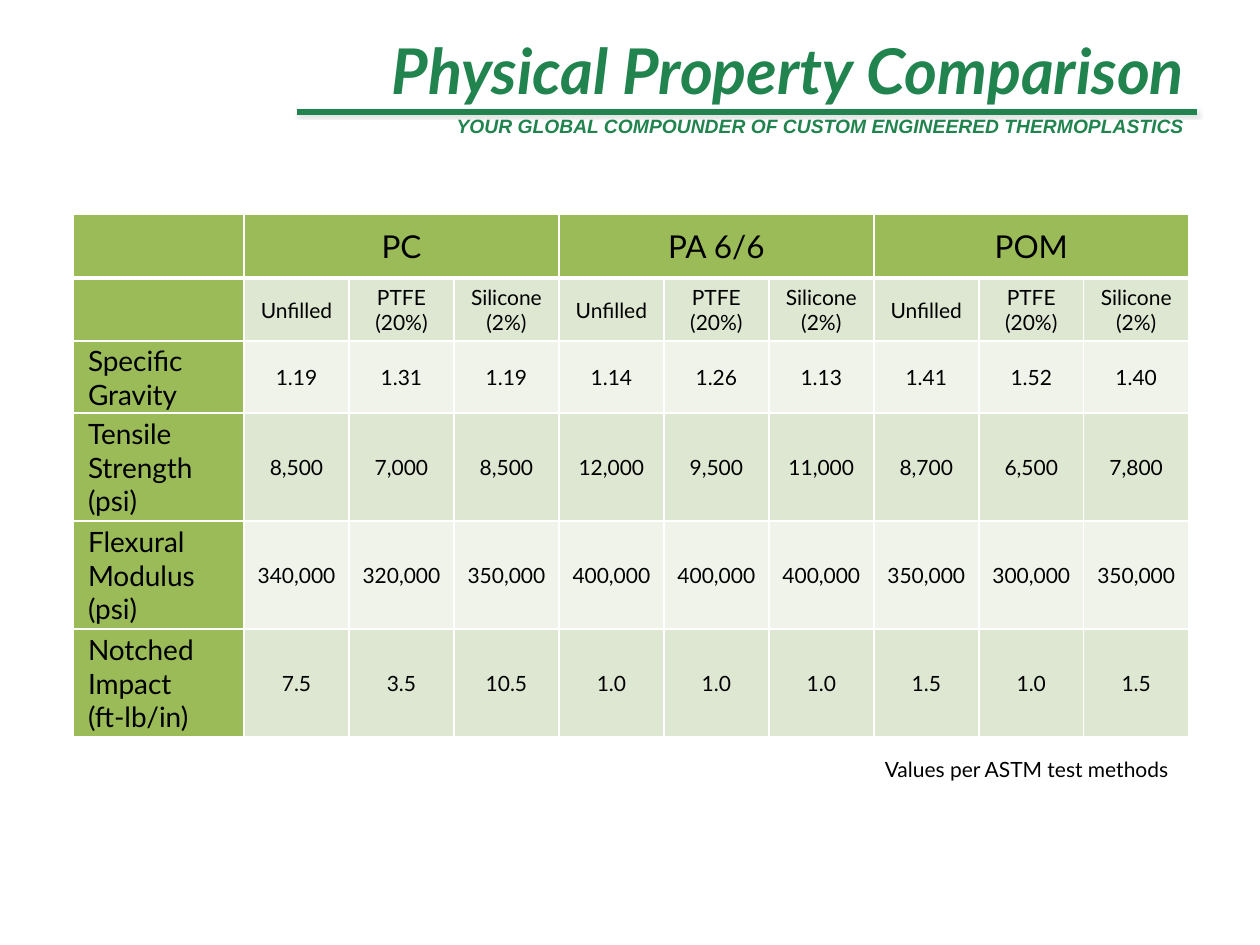
from dataclasses import dataclass

import pptx
import pptx.dml.color
import pptx.enum.shapes
import pptx.enum.text
import pptx.oxml
import pptx.oxml.ns
import pptx.util

EMU_PER_PX = 914400 / 126
GREEN, HEADER, BAND_DARK, BAND_LIGHT = "21834E", "9BBB59", "DEE7D1", "EFF3EA"
BLACK, WHITE = "000000", "FFFFFF"
ALIGN = pptx.enum.text.PP_ALIGN
ANCHOR = pptx.enum.text.MSO_ANCHOR


@dataclass
class TextStyle:
    size: int
    align: ALIGN
    color: str = BLACK
    font: str = "Lato"
    emphasis: bool = False


@dataclass
class PropertyRow:
    label: str
    values: list[str]
    height: int


TITLE = TextStyle(36, ALIGN.RIGHT, GREEN, emphasis=True)
TAGLINE = TextStyle(11, ALIGN.RIGHT, GREEN, "Arial", True)
FOOTNOTE = TextStyle(12, ALIGN.RIGHT)
POLYMER = TextStyle(18, ALIGN.CENTER)
LABEL = TextStyle(16, ALIGN.LEFT)
VALUE = TextStyle(12, ALIGN.CENTER)

POLYMERS = ["PC", "PA 6/6", "POM"]
GRADES = ["Unfilled", "PTFE\n(20%)", "Silicone\n(2%)"]
HEADER_HEIGHT, LABEL_WIDTH, VALUE_WIDTH = 64, 171, 105
ROWS = [
    PropertyRow("", GRADES * len(POLYMERS), 63),
    PropertyRow("Specific\nGravity",
                ["1.19", "1.31", "1.19", "1.14", "1.26", "1.13", "1.41", "1.52", "1.40"], 72),
    PropertyRow("Tensile\nStrength\n(psi)",
                ["8,500", "7,000", "8,500", "12,000", "9,500", "11,000",
                 "8,700", "6,500", "7,800"], 108),
    PropertyRow("Flexural\nModulus\n(psi)",
                ["340,000", "320,000", "350,000", "400,000", "400,000", "400,000",
                 "350,000", "300,000", "350,000"], 108),
    PropertyRow("Notched\nImpact\n(ft-lb/in)",
                ["7.5", "3.5", "10.5", "1.0", "1.0", "1.0", "1.5", "1.0", "1.5"], 108),
]


def px(length: int) -> pptx.util.Emu:
    return pptx.util.Emu(round(length * EMU_PER_PX))


def rgb(color: str) -> pptx.dml.color.RGBColor:
    return pptx.dml.color.RGBColor.from_string(color)


def xml(markup: str):
    """Parse one drawing element, declaring its namespace."""
    tag, rest = markup.split(" ", 1)
    return pptx.oxml.parse_xml(f"{tag} {pptx.oxml.ns.nsdecls('a')} {rest}")


def write(frame, text: str, style: TextStyle) -> None:
    frame.text = text
    for para in frame.paragraphs:
        para.alignment = style.align
        para.font.size = pptx.util.Pt(style.size)
        para.font.name = style.font
        para.font.bold = para.font.italic = style.emphasis
        para.font.color.rgb = rgb(style.color)


def add_text(page, text: str, style: TextStyle,
             left: int, top: int, width: int, height: int) -> None:
    box = page.shapes.add_textbox(px(left), px(top), px(width), px(height))
    box.text_frame.word_wrap = True
    write(box.text_frame, text, style)


def add_rule(page, left: int, right: int, top: int) -> None:
    rule = page.shapes.add_connector(
        pptx.enum.shapes.MSO_CONNECTOR.STRAIGHT, px(left), px(top), px(right), px(top))
    rule.line.color.rgb = rgb(GREEN)
    rule.line.width = pptx.util.Pt(3)
    rule._element.spPr.append(xml(
        '<a:effectLst ><a:outerShdw blurRad="25400" dist="12700" dir="2700000">'
        '<a:srgbClr val="808080"><a:alpha val="25000"/></a:srgbClr>'
        '</a:outerShdw></a:effectLst>'))


def format_cell(cell, text: str, style: TextStyle, fill: str,
                top_border: int = 1, bottom_border: int = 1, indent: int = 1) -> None:
    properties = cell._tc.get_or_add_tcPr()
    for side, points in zip("LRTB", (1, 1, top_border, bottom_border)):
        properties.append(xml(
            f'<a:ln{side} w="{points * 12700}"><a:solidFill><a:srgbClr val="{WHITE}"/>'
            f'</a:solidFill></a:ln{side}>'))
    cell.fill.solid()
    cell.fill.fore_color.rgb = rgb(fill)
    cell.vertical_anchor = ANCHOR.MIDDLE
    cell.margin_left = px(indent)
    cell.margin_right = cell.margin_top = px(1)
    cell.margin_bottom = 0
    write(cell.text_frame, text, style)


def add_property_table(page, left: int, top: int) -> None:
    value_count = len(POLYMERS) * len(GRADES)
    widths = [LABEL_WIDTH] + [VALUE_WIDTH] * value_count
    heights = [HEADER_HEIGHT] + [row.height for row in ROWS]
    table = page.shapes.add_table(len(heights), len(widths), px(left), px(top),
                                  px(sum(widths)), px(sum(heights))).table
    table.first_row = table.horz_banding = False
    for column, width in zip(table.columns, widths):
        column.width = px(width)
    for table_row, height in zip(table.rows, heights):
        table_row.height = px(height)

    # Polymer headings, each merged over its grades
    for column in range(len(widths)):
        group, offset = divmod(column - 1, len(GRADES))
        heading = POLYMERS[group] if column and offset == 0 else ""
        format_cell(table.cell(0, column), heading, POLYMER, HEADER, bottom_border=3)
    for first in range(1, len(widths), len(GRADES)):
        table.cell(0, first).merge(table.cell(0, first + len(GRADES) - 1))

    # Grade row and property rows in alternating bands
    for number, row in enumerate(ROWS, start=1):
        band = BAND_DARK if number % 2 == 0 or number == 1 else BAND_LIGHT
        band = BAND_DARK if number % 2 else BAND_LIGHT
        top_border = 3 if number == 1 else 1
        format_cell(table.cell(number, 0), row.label, LABEL, HEADER, top_border, indent=15)
        for column, value in enumerate(row.values, start=1):
            format_cell(table.cell(number, column), value, VALUE, band, top_border)


def main() -> None:
    deck = pptx.Presentation()
    deck.slide_width, deck.slide_height = px(1260), px(945)
    page = deck.slides.add_slide(deck.slide_layouts[5])

    # Heading with rule and tagline
    title = page.shapes.title
    title.left, title.top, title.width, title.height = px(297), px(0), px(900), px(113)
    title.text_frame.auto_size = pptx.enum.text.MSO_AUTO_SIZE.NONE
    title.text_frame.vertical_anchor = ANCHOR.BOTTOM
    write(title.text_frame, "Physical Property Comparison", TITLE)
    add_rule(page, 297, 1197, 112)
    add_text(page, "YOUR GLOBAL COMPOUNDER OF CUSTOM ENGINEERED THERMOPLASTICS",
             TAGLINE, 297, 108, 900, 37)

    # Property table and its footnote
    add_property_table(page, 73, 214)
    add_text(page, "Values per ASTM test methods", FOOTNOTE, 73, 750, 1108, 38)

    deck.save("out.pptx")


if __name__ == "__main__":
    main()
